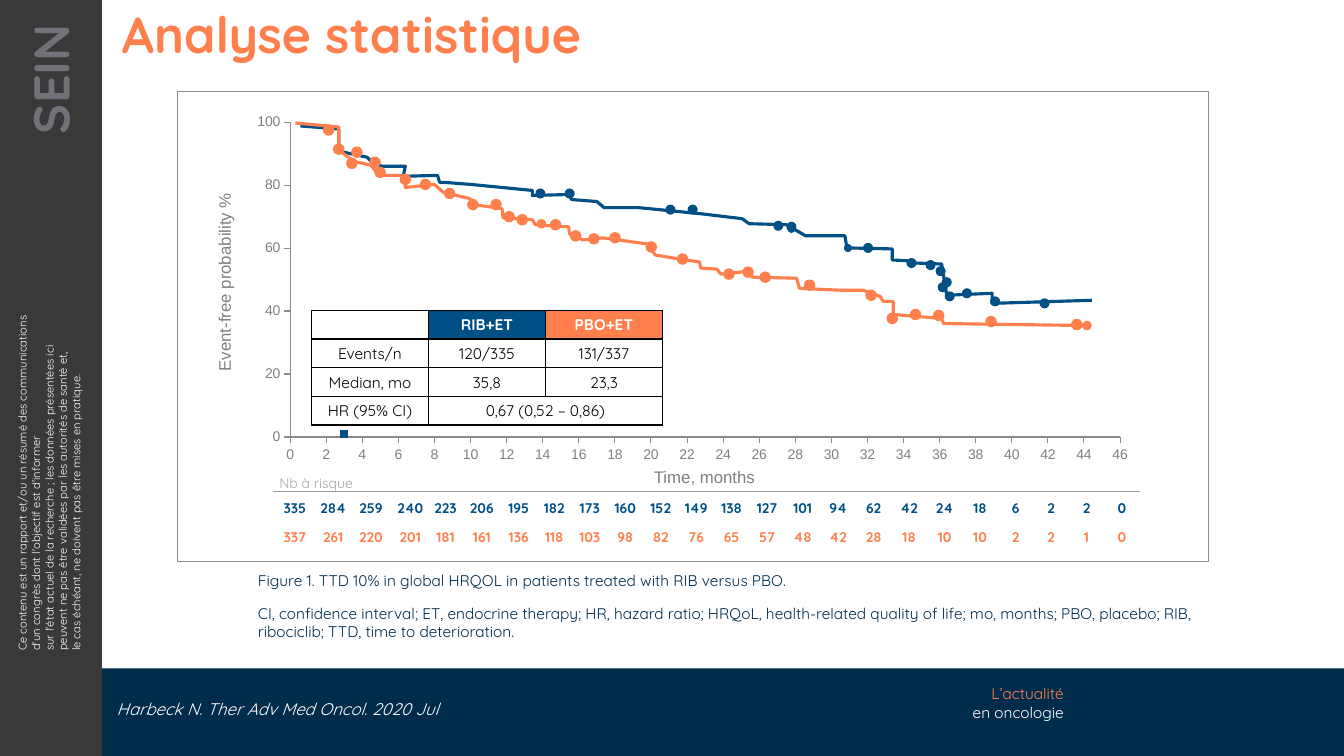
from lxml import etree
from pptx import Presentation
from pptx import util as u
from pptx.chart import data as cd
from pptx.dml import color
from pptx.enum import chart as ce, shapes, text
from pptx.oxml import ns

I = u.Inches
BLUE, ORANGE, NAVY, WHITE, GREY = "005086", "FF7F4D", "002C4C", "FFFFFF", "808080"
C, R = text.PP_ALIGN.CENTER, text.PP_ALIGN.RIGHT
TOP, MID, BOTTOM = text.MSO_ANCHOR.TOP, text.MSO_ANCHOR.MIDDLE, text.MSO_ANCHOR.BOTTOM

BLUE_CURVE = [
    (883, 198), (784, 201), (784, 191), (739, 193), (734, 162), (708, 161), (704, 159), (685, 158),
    (685, 147), (640, 146), (638, 134), (599, 134), (580, 123), (543, 122), (536, 117), (494, 112),
    (433, 106), (399, 106), (392, 100), (367, 98), (364, 93), (328, 94), (328, 89), (267, 83),
    (241, 81), (236, 81), (234, 74), (200, 75), (202, 65), (179, 65), (170, 62), (164, 56),
    (136, 50), (136, 28), (98, 25)]
ORANGE_CURVE = [
    (880, 223), (736, 221), (734, 216), (686, 212), (686, 199), (676, 199), (673, 194), (656, 188),
    (635, 188), (593, 186), (590, 176), (546, 175), (543, 169), (515, 172), (511, 167), (495, 166),
    (494, 160), (474, 157), (450, 153), (442, 142), (398, 136), (378, 138), (365, 132), (364, 125),
    (331, 123), (328, 118), (299, 116), (298, 107), (270, 103), (266, 97), (240, 91), (231, 83),
    (202, 86), (203, 74), (176, 74), (168, 64), (151, 60), (136, 49), (136, 26), (93, 22)]
BLUE_DOTS = [
    (331, 87), (831, 196), (782, 194), (754, 186), (737, 189), (730, 180), (728, 164), (718, 158),
    (734, 175), (699, 156), (637, 142, 8), (656, 141), (581, 123, 8), (580, 120), (567, 119),
    (460, 103), (482, 103), (360, 87)]
ORANGE_DOTS = [
    (778, 214), (149, 46), (167, 56), (863, 217), (874, 219, 8), (726, 208), (703, 207), (680, 211),
    (659, 188), (598, 178), (554, 170), (537, 165), (518, 167), (472, 152), (441, 140), (366, 129),
    (405, 131), (384, 132), (333, 118, 8), (346, 118), (300, 110), (313, 113), (287, 98), (264, 98),
    (241, 87), (172, 66), (121, 24), (217, 78), (197, 73), (144, 57), (131, 43)]
RISK = [
    "335 284 259 240 223 206 195 182 173 160 152 149 138 127 101 94 62 42 24 18 6 2 2 0".split(),
    "337 261 220 201 181 161 136 118 103 98 82 76 65 57 48 42 28 18 10 10 2 2 1 0".split()]
RESULTS = [["", "RIB+ET", "PBO+ET"], ["Events/n", "120/335", "131/337"],
           ["Median, mo", "35,8", "23,3"], ["HR (95% CI)", "0,67 (0,52 – 0,86)", ""]]


def rgb(hex_color):
    """Return the colour for a hex string."""
    return color.RGBColor.from_string(hex_color)


def write(p, content, size, col, font="Quicksand", bold=False, italic=False, align=None):
    """Add runs to a paragraph, with a line break at each newline."""
    if align is not None:
        p.alignment = align
    for i, line in enumerate(content.split("\n")):
        if i:
            p.add_line_break()
        r = p.add_run()
        r.text = line
        f = r.font
        f.size, f.name, f.bold, f.italic = u.Pt(size), font, bold, italic
        f.color.rgb = rgb(col)


def textbox(s, box, inset=(0.1, 0.1), rotation=0, anchor=TOP):
    """Add an empty wrapped text box and return its frame."""
    sp = s.shapes.add_textbox(*map(I, box))
    sp.rotation = rotation
    tf = sp.text_frame
    tf.word_wrap, tf.vertical_anchor = True, anchor
    tf.margin_left, tf.margin_right = map(I, inset)
    return tf


def shape(s, kind, box, fill=None, line=None, width=1):
    """Add a preset shape with a plain fill and outline."""
    sp = s.shapes.add_shape(kind, *map(I, box))
    sp.shadow.inherit = False
    if fill:
        sp.fill.solid()
        sp.fill.fore_color.rgb = rgb(fill)
    else:
        sp.fill.background()
    if line:
        sp.line.color.rgb, sp.line.width = rgb(line), u.Pt(width)
    else:
        sp.line.fill.background()


def table(s, box, widths, heights):
    """Add a table without style and return it."""
    t = s.shapes.add_table(len(heights), len(widths), *map(I, box)).table
    t.first_row = t.horz_banding = False
    t._tbl.tblPr.find(ns.qn("a:tableStyleId")).text = "{2D5ABB26-0587-4C30-8999-92F81FD0307C}"
    for col, w in zip(t.columns, widths):
        col.width = I(w)
    for row, h in zip(t.rows, heights):
        row.height = I(h)
    return t


def fill_cell(cell, content, size, col, fill=None, bold=False, align=C, anchor=MID):
    """Write one table cell and set its background."""
    cell.vertical_anchor = anchor
    if fill:
        cell.fill.solid()
        cell.fill.fore_color.rgb = rgb(fill)
    else:
        cell.fill.background()
    p = cell.text_frame.paragraphs[0]
    if content:
        write(p, content, size, col, bold=bold, align=align)
    else:
        etree.SubElement(p._p, ns.qn("a:endParaRPr"), sz=str(size * 100))


def borders(cell, sides, col):
    """Draw one-point borders on the given sides of a cell."""
    for i, side in enumerate(sides):
        ln = etree.Element(ns.qn(f"a:ln{side}"), w="12700")
        fill = etree.SubElement(ln, ns.qn("a:solidFill"))
        etree.SubElement(fill, ns.qn("a:srgbClr"), val=col)
        cell._tc.get_or_add_tcPr().insert(i, ln)


def master(s, w, h):
    """Place the side band, the footer band and their texts."""
    shape(s, shapes.MSO_SHAPE.RECTANGLE, (1.01, h - 0.87, w - 1.01, 0.87), NAVY)
    shape(s, shapes.MSO_SHAPE.RECTANGLE, (0, 0, 1.01, h), "3A3839")
    tf = textbox(s, (-1.31, 4.37, 3.6, 0.77), rotation=270)
    write(tf.paragraphs[0], "Ce contenu est un rapport et/ou un résumé des communications d'un congrès "
          "dont l'objectif est d'informer\nsur l'état actuel de la recherche ; les données présentées ici "
          "peuvent ne pas être validées par les autorités de santé et,\n"
          "le cas échéant, ne doivent pas être mises en pratique.", 8, WHITE)
    tf = textbox(s, (-1.04, 1.18, 3.07, 0.71), (0.1, 0.24), 270)
    write(tf.paragraphs[0], "SEIN", 36, "737078", bold=True, align=R)
    p = textbox(s, (9.01, h - 0.76, 1.64, 0.47)).paragraphs[0]
    write(p, "L’actualité", 11, ORANGE, align=R)
    p.add_line_break()
    write(p, "en oncologie", 11, WHITE)


def axes_chart(s, box):
    """Add the scatter chart that carries the axes."""
    data = cd.XyChartData()
    points = data.add_series("Series 1")
    for x in (1, 2, 3):
        points.add_data_point(x, 1)
    ch = s.shapes.add_chart(ce.XL_CHART_TYPE.XY_SCATTER, *map(I, box), data).chart
    ch.has_legend = ch.has_title = False
    ch.font.size, ch.font.name = u.Pt(10), "Arial"
    ch.font.color.rgb = rgb(GREY)
    plot = ch.plots[0]
    plot.vary_by_categories = False
    series = plot.series[0]
    series.smooth = False
    series.format.line.color.rgb = rgb(BLUE)
    ser = series._element
    ser.remove(ser.find(ns.qn("c:xVal")))
    for pt in list(ser.find(ns.qn("c:yVal")).iter(ns.qn("c:pt")))[:2]:
        pt.getparent().remove(pt)
    mk = series.marker
    mk.style, mk.size = ce.XL_MARKER_STYLE.SQUARE, 5
    mk.format.fill.solid()
    mk.format.fill.fore_color.rgb = rgb("99CCFF")
    mk.format.line.fill.background()
    for ax, top, step in ((ch.category_axis, 46, 2), (ch.value_axis, 100, 20)):
        ax.minimum_scale, ax.maximum_scale, ax.major_unit = 0, top, step
        ax.has_major_gridlines = False
        ax.major_tick_mark = ce.XL_TICK_MARK.OUTSIDE
        ax.format.line.color.rgb, ax.format.line.width = rgb("8B8B8B"), u.Pt(0.75)
        ax.tick_labels.number_format, ax.tick_labels.number_format_is_linked = "0", False
    area = ch._chartSpace.chart.plotArea
    for old in area.findall(ns.qn("c:layout")):
        area.remove(old)
    layout = etree.Element(ns.qn("c:layout"))
    manual = etree.SubElement(layout, ns.qn("c:manualLayout"))
    for tag, val in (("layoutTarget", "inner"), ("xMode", "edge"), ("yMode", "edge"),
                     ("x", "0.039"), ("y", "0.022"), ("w", "0.873"), ("h", "0.84")):
        etree.SubElement(manual, ns.qn(f"c:{tag}"), val=val)
    area.insert(0, layout)


def curve(s, x, y, points, col):
    """Draw a survival curve from points in hundredths of an inch."""
    fb = s.shapes.build_freeform(*points[0], scale=I(0.01))
    fb.add_line_segments(points[1:], close=False)
    sp = fb.convert_to_shape(I(x), I(y))
    sp.shadow.inherit = False
    sp.fill.background()
    sp.line.color.rgb, sp.line.width = rgb(col), u.Pt(2.25)


def dots(s, x, y, places, col, line=None):
    """Draw censoring dots from places in hundredths of an inch."""
    for dx, dy, *small in places:
        d = small[0] / 100 if small else 0.1
        shape(s, shapes.MSO_SHAPE.OVAL, (x + dx / 100, y + dy / 100, d, d), col, line)


def risk_table(s, box):
    """Place the numbers at risk under the time axis."""
    first = [0.43, 0.33, 0.42, 0.36, 0.34, 0.38]
    widths = first + [(box[2] - sum(first)) / 18] * 18
    t = table(s, box, widths, [0.29, 0.33, 0.25])
    for i, values in enumerate([["Nb à risque"] + [""] * 23] + RISK):
        for j, value in enumerate(values):
            cell = t.cell(i, j)
            cell.margin_left = cell.margin_right = cell.margin_top = cell.margin_bottom = 0
            if i:
                fill_cell(cell, value, 10, (BLUE, ORANGE)[i - 1], bold=True)
            else:
                fill_cell(cell, value, 10, "A6A6A6", align=None, anchor=BOTTOM)
                borders(cell, "B", "9898A2")
    t.cell(0, 0).margin_left = I(0.06)
    t.cell(0, 0).merge(t.cell(0, 6))


def results_table(s, box):
    """Place the table of events, medians and hazard ratio."""
    t = table(s, box, [box[2] / 3] * 3, [box[3] / 4] * 4)
    for i, row in enumerate(RESULTS):
        for j, value in enumerate(row):
            head = i == 0 and j > 0
            fill = (WHITE, BLUE, ORANGE)[j] if head else WHITE
            fill_cell(t.cell(i, j), value, 11, WHITE if head else "000000", fill, head)
            borders(t.cell(i, j), "LRTB", "000000")
    t.cell(3, 1).merge(t.cell(3, 2))


def figure(s, x, y, w, h):
    """Place the framed figure: chart, curves, tables and axis titles."""
    axes_chart(s, (x + 0.75, y + 0.22, 9.43, 3.72))
    cx, cy = x + 0.24, y + 0.09
    curve(s, cx, cy, BLUE_CURVE, BLUE)
    curve(s, cx, cy, ORANGE_CURVE, ORANGE)
    risk_table(s, (x + 0.95, y + 3.68, 8.6, 0.87))
    for box, turn, title in (((x + 1.03, y + 3.67, 8.44, 0.3), 0, "Time, months "),
                             ((x - 1.84, y + 1.74, 4.61, 0.3), 270, "Event-free probability %")):
        write(textbox(s, box, rotation=turn).paragraphs[0], title, 12, GREY, "Arial", align=C)
    dots(s, cx, cy, BLUE_DOTS, BLUE)
    dots(s, cx, cy, ORANGE_DOTS, ORANGE, ORANGE)
    results_table(s, (x + 1.33, y + 2.17, 3.48, 1.13))
    shape(s, shapes.MSO_SHAPE.RECTANGLE, (x, y, w, h), line="8B8B8B", width=0.25)


def captions(s):
    """Place the title, the figure caption and the reference."""
    p = textbox(s, (1.01, 0.05, 12.31, 0.57), (0.2, 0.1)).paragraphs[0]
    p.line_spacing = 0.9
    write(p, "Analyse statistique", 36, ORANGE, bold=True)
    tf = textbox(s, (2.46, 5.62, 10.01, 1))
    write(tf.paragraphs[0], "Figure 1. TTD 10% in global HRQOL in patients treated with RIB versus PBO.", 11, "002D4C")
    p = tf.add_paragraph()
    p.space_before = u.Pt(10)
    write(p, "CI, confidence interval; ET, endocrine therapy; HR, hazard ratio; HRQoL, health-related quality "
          "of life; mo, months; PBO, placebo; RIB, ribociclib; TTD, time to deterioration.", 11, "002D4C")
    tf = textbox(s, (1.06, 6.9, 5.64, 0.27), anchor=MID)
    write(tf.paragraphs[0], "Harbeck N. Ther Adv Med Oncol. 2020 Jul", 12, WHITE, italic=True)


def main():
    """Build the slide and save it."""
    prs = Presentation()
    prs.slide_width, prs.slide_height = I(13.33), I(7.5)
    s = prs.slides.add_slide(prs.slide_layouts[6])
    master(s, 13.33, 7.5)
    figure(s, 1.76, 0.91, 10.22, 4.66)
    captions(s)
    prs.save("out.pptx")


if __name__ == "__main__":
    main()
